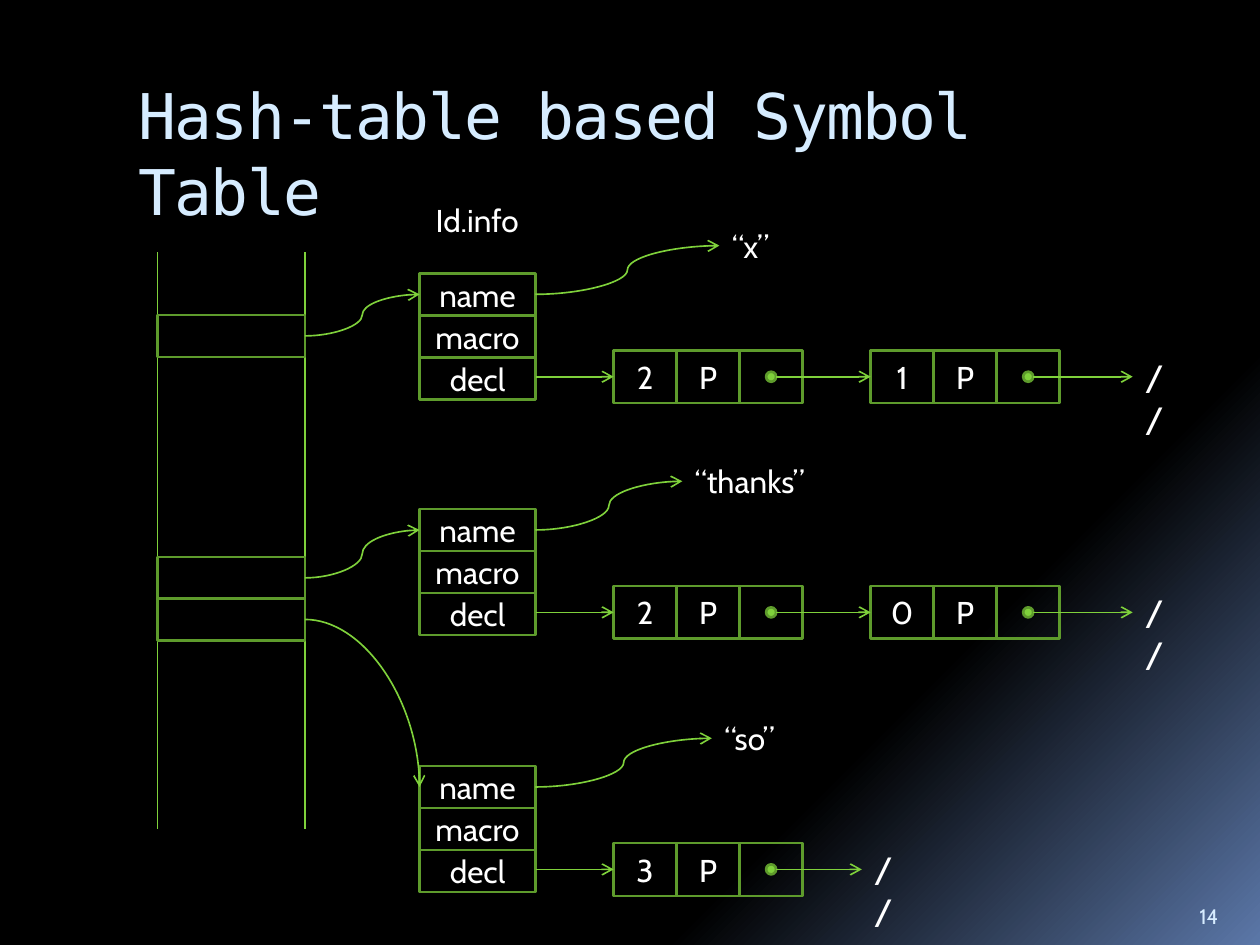
"""Build the hash-table based symbol table slide."""
from copy import deepcopy
from dataclasses import dataclass

from lxml import etree
from pptx import Presentation
from pptx.dml.color import RGBColor
from pptx.enum import shapes, text
from pptx.oxml.ns import qn
from pptx.util import Inches, Pt


@dataclass(frozen=True)
class Theme:
    white: RGBColor = RGBColor.from_string("FFFFFF")
    black: RGBColor = RGBColor.from_string("000000")
    glow: RGBColor = RGBColor.from_string("5B77A8")
    pale: RGBColor = RGBColor.from_string("D6ECFF")
    link: RGBColor = RGBColor.from_string("7FD13B")
    edge: RGBColor = RGBColor.from_string("5E9B2C")
    heading_font: str = "DejaVu Sans Mono"
    body_font: str = "Cabin"
    heading_size: float = 36
    body_size: float = 18
    end_size: float = 20
    number_size: float = 12
    edge_width: float = 1.5
    link_width: float = 0.94


@dataclass(frozen=True)
class Entry:
    identifier: str
    identifier_width: float
    top: float
    bucket_top: float
    levels: tuple[str, ...]
    last_link: float
    bends_down: bool = False


THEME = Theme()
TABLE_LEFT, TABLE_WIDTH = 1.25, 1.17
TABLE_RIGHT = TABLE_LEFT + TABLE_WIDTH
TABLE_TOP, TABLE_BOTTOM = 2, 6.58
INFO_LEFT, INFO_WIDTH, ROW = 3.33, 0.92, 1 / 3
INFO_RIGHT = INFO_LEFT + INFO_WIDTH
FIELDS = ("name", "macro", "decl")
CHAIN_LEFT, CHAIN_STEP = 4.87, 2.04
CELL_WIDTH, CELL_HEIGHT, DOT = 0.5, 0.42, 0.08
IDENTIFIER_CENTER = 5.97
ENTRIES = (
    Entry("“x”", 0.52, 2.17, 2.5, ("2", "1"), 0.79),
    Entry("“thanks”", 1.11, 4.04, 4.42, ("2", "0"), 0.79),
    Entry("“so”", 0.64, 6.08, 4.75, ("3",), 0.68, bends_down=True),
)


def style_paragraph(paragraph, size: float, color: RGBColor, font: str = THEME.body_font) -> None:
    """Set the font of a whole paragraph."""
    paragraph.font.name = font
    paragraph.font.size = Pt(size)
    paragraph.font.color.rgb = color


def paint_background(slide) -> None:
    """Fill the background with a diagonal gradient of three stops."""
    fill = slide.background.fill
    fill.gradient()
    fill.gradient_angle = 315
    stop_list = next(slide.element.iter(qn("a:gsLst")))
    stop_list.append(deepcopy(stop_list[-1]))
    stops = ((0.65, THEME.black), (0.73, THEME.black), (1, THEME.glow))
    for stop, (position, color) in zip(fill.gradient_stops, stops):
        stop.position = position
        stop.color.rgb = color


def add_title(slide, wording: str) -> None:
    """Move and format the title placeholder."""
    title = slide.shapes.title
    title.left, title.top, title.width, title.height = map(Inches, (1, 0.56, 8.5, 1))
    frame = title.text_frame
    frame.text = wording
    frame.word_wrap = True
    frame.auto_size = text.MSO_AUTO_SIZE.NONE
    frame.vertical_anchor = text.MSO_ANCHOR.TOP
    paragraph = frame.paragraphs[0]
    paragraph.alignment = text.PP_ALIGN.LEFT
    style_paragraph(paragraph, THEME.heading_size, THEME.pale, THEME.heading_font)
    paragraph.runs[0].font._element.set("spc", "-100")


def add_label(slide, wording: str, left: float, top: float, width: float, height: float = 0.4,
              size: float = THEME.body_size, color: RGBColor = THEME.white, wrap: bool = False):
    """Add a text box and return its frame."""
    frame = slide.shapes.add_textbox(*map(Inches, (left, top, width, height))).text_frame
    frame.text = wording
    frame.word_wrap = wrap
    frame.auto_size = text.MSO_AUTO_SIZE.SHAPE_TO_FIT_TEXT
    style_paragraph(frame.paragraphs[0], size, color)
    return frame


def add_outlined(owner, kind, left: float, top: float, width: float, height: float):
    """Add a preset shape with a green edge and no fill."""
    outlined = owner.shapes.add_shape(kind, *map(Inches, (left, top, width, height)))
    outlined.shadow.inherit = False
    outlined.fill.background()
    outlined.line.color.rgb = THEME.edge
    outlined.line.width = Pt(THEME.edge_width)
    return outlined


def add_cell(owner, left: float, top: float, width: float, height: float, wording: str = "") -> None:
    """Add a box with optional centred text."""
    cell = add_outlined(owner, shapes.MSO_SHAPE.RECTANGLE, left, top, width, height)
    if wording:
        frame = cell.text_frame
        frame.text = wording
        frame.vertical_anchor = text.MSO_ANCHOR.MIDDLE
        frame.paragraphs[0].alignment = text.PP_ALIGN.CENTER
        style_paragraph(frame.paragraphs[0], THEME.body_size, THEME.white)


def add_link(slide, start: tuple[float, float], end: tuple[float, float],
             kind=shapes.MSO_CONNECTOR.STRAIGHT, arrow: bool = True):
    """Join two points with a line, by default with an arrowhead."""
    link = slide.shapes.add_connector(kind, *map(Inches, (*start, *end)))
    link.line.color.rgb = THEME.link
    link.line.width = Pt(THEME.link_width)
    properties = link._element.spPr
    if arrow:
        etree.SubElement(properties.find(qn("a:ln")), qn("a:tailEnd"), type="arrow")
    etree.SubElement(properties, qn("a:effectLst"))
    return link


def add_declaration(slide, left: float, top: float, level: str) -> None:
    """Add one grouped list node: level, kind and pointer dot."""
    node = slide.shapes.add_group_shape()
    for column, wording in enumerate((level, "P", "")):
        add_cell(node, left + column * CELL_WIDTH, top, CELL_WIDTH, CELL_HEIGHT, wording)
    dot = add_outlined(node, shapes.MSO_SHAPE.OVAL, left + 1.21, top + 0.17, DOT, DOT)
    dot.fill.solid()
    dot.fill.fore_color.rgb = THEME.link


def add_entry(slide, entry: Entry) -> None:
    """Draw a bucket, its record, its identifier and its declaration chain."""
    curve = shapes.MSO_CONNECTOR.CURVE
    name_y, chain_y = entry.top + ROW / 2, entry.top + 0.82
    add_cell(slide, TABLE_LEFT, entry.bucket_top, TABLE_WIDTH, ROW)
    for row, field in enumerate(FIELDS):
        add_cell(slide, INFO_LEFT, entry.top + row * ROW, INFO_WIDTH, ROW, field)
    bucket_link = add_link(slide, (TABLE_RIGHT, entry.bucket_top + ROW / 2), (INFO_LEFT, name_y), curve)
    if entry.bends_down:
        bucket_link._element.spPr.find(qn("a:prstGeom")).set("prst", "curvedConnector2")

    identifier_left = IDENTIFIER_CENTER - entry.identifier_width / 2
    add_label(slide, entry.identifier, identifier_left, entry.top - 0.42, entry.identifier_width)
    add_link(slide, (INFO_RIGHT, name_y), (identifier_left, entry.top - 0.22), curve)

    source_x = INFO_RIGHT
    for position, level in enumerate(entry.levels):
        left = CHAIN_LEFT + position * CHAIN_STEP
        add_declaration(slide, left, chain_y - CELL_HEIGHT / 2, level)
        add_link(slide, (source_x, chain_y), (left, chain_y))
        source_x = left + 1.29
    end_x = source_x + entry.last_link
    add_link(slide, (source_x, chain_y), (end_x, chain_y))
    add_label(slide, "//", end_x, chain_y - 0.22, 0.36, 0.44, THEME.end_size, wrap=True)


def main() -> None:
    """Build and save the slide."""
    deck = Presentation()
    deck.slide_width, deck.slide_height = Inches(10), Inches(7.5)
    slide = deck.slides.add_slide(deck.slide_layouts[5])
    paint_background(slide)
    add_title(slide, "Hash-table based Symbol Table")
    number = add_label(slide, "14", 9.42, 7.02, 0.5, size=THEME.number_size, color=THEME.pale, wrap=True)
    number.auto_size = text.MSO_AUTO_SIZE.NONE
    number.vertical_anchor = text.MSO_ANCHOR.BOTTOM
    for rail_x in (TABLE_LEFT, TABLE_RIGHT):
        add_link(slide, (rail_x, TABLE_TOP), (rail_x, TABLE_BOTTOM), arrow=False)
    add_label(slide, "Id.info", 3.36, 1.55, 0.87)
    for entry in ENTRIES:
        add_entry(slide, entry)
    deck.save("out.pptx")


if __name__ == "__main__":
    main()
